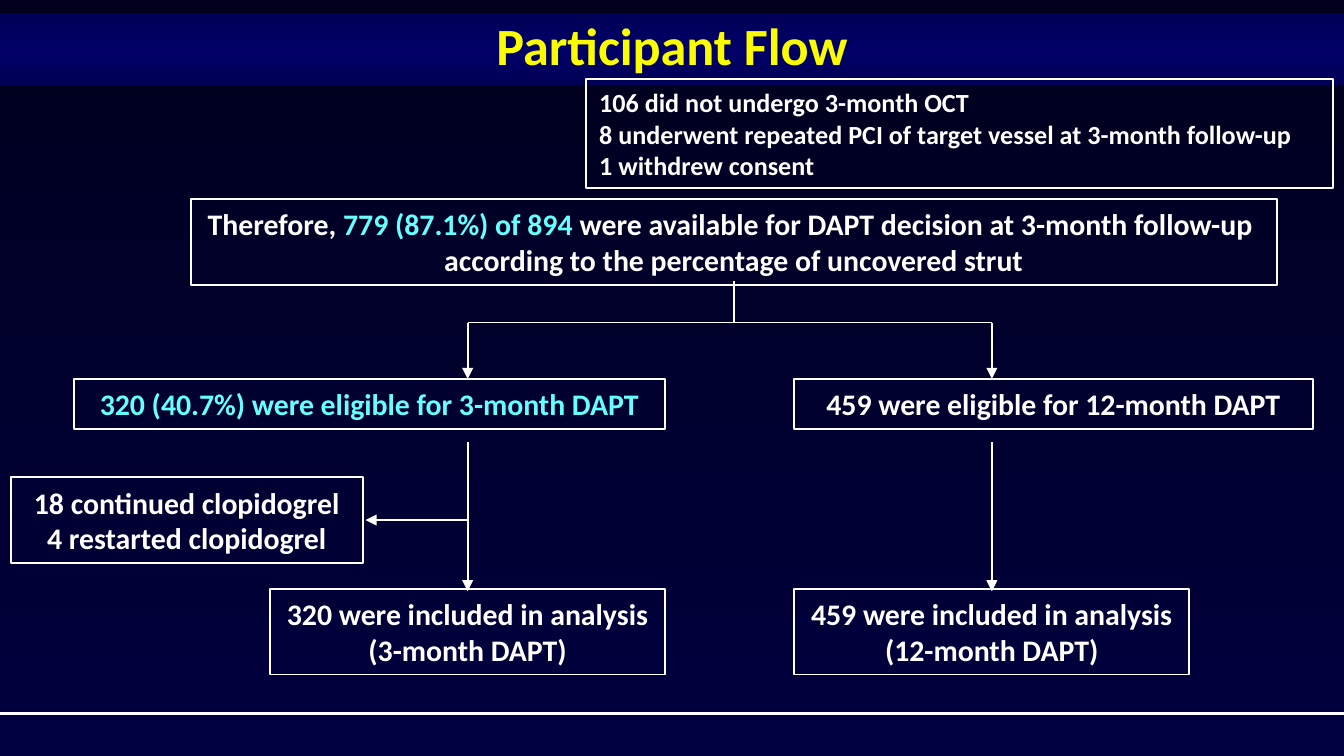
from copy import deepcopy

from pptx import Presentation, util as u
from pptx.dml.color import RGBColor
from pptx.enum import shapes, text
from pptx.oxml.ns import qn
from lxml import etree

PX = 9144
FONT = "Calibri"
HUE = {
    "white": "FFFFFF", "cyan": "66FFFF", "yellow": "FAFD00",
    "top": "00001D", "base": "00003E", "edge": "000057", "mid": "000066",
}


def rgb(name):
    """Return the named colour."""
    return RGBColor.from_string(HUE[name])


def paint(fill, root, names):
    """Fill downwards with evenly spaced colour stops."""
    fill.gradient()
    fill.gradient_angle = 270
    stops = root.xpath(".//a:gsLst")[0]
    while len(stops) < len(names):
        stops.append(deepcopy(stops[0]))
    for i, (stop, name) in enumerate(zip(fill.gradient_stops, names)):
        stop.position = i / (len(names) - 1)
        stop.color.rgb = rgb(name)


def style(run, size, hue):
    """Format one run in the bold slide font."""
    font = run.font
    font.name, font.size, font.bold = FONT, u.Pt(size), True
    font.color.rgb = rgb(hue)


def head(slide, box, words):
    """Place the title band."""
    title = slide.shapes.title
    title.left, title.top, title.width, title.height = (n * PX for n in box)
    paint(title.fill, title._element, ["edge", "mid", "edge"])
    frame = title.text_frame
    frame.text = words
    frame.vertical_anchor = text.MSO_ANCHOR.MIDDLE
    para = frame.paragraphs[0]
    para.alignment = text.PP_ALIGN.CENTER
    para.line_spacing = 0.9
    style(para.runs[0], 28, "yellow")


def card(slide, box, lines, size=16, align=text.PP_ALIGN.CENTER):
    """Place an outlined box holding lines of (words, hue) runs."""
    shape = slide.shapes.add_shape(
        shapes.MSO_SHAPE.RECTANGLE, *(n * PX for n in box))
    shape.shadow.inherit = False
    shape.fill.background()
    shape.line.color.rgb = rgb("white")
    shape.line.width = u.Pt(1)
    frame = shape.text_frame
    frame.word_wrap = True
    frame.vertical_anchor = text.MSO_ANCHOR.MIDDLE
    for i, line in enumerate(lines):
        para = frame.add_paragraph() if i else frame.paragraphs[0]
        para.alignment = align
        for words, hue in line:
            run = para.add_run()
            run.text = words
            style(run, size, hue)


def link(slide, x1, y1, x2, y2, arrow=False, width=1):
    """Draw a straight line, with an arrowhead at its end if asked."""
    line = slide.shapes.add_connector(
        shapes.MSO_CONNECTOR.STRAIGHT, *(n * PX for n in (x1, y1, x2, y2)))
    line.line.color.rgb = rgb("white")
    line.line.width = u.Pt(width)
    if arrow:
        etree.SubElement(line.line._get_or_add_ln(), qn("a:tailEnd"),
                         type="triangle")
    etree.SubElement(line._element.spPr, qn("a:effectLst"))


def plain(*lines, hue="white"):
    """Turn strings into lines of one run each."""
    return [[(line, hue)] for line in lines]


def arm(slide, x, left, wide, count, months, hue):
    """Draw one treatment arm, from the split down to the analysis."""
    link(slide, x, 240, x, 282, True)
    card(slide, (left, 282, wide, 37),
         plain(f"{count} were eligible for {months}-month DAPT", hue=hue))
    link(slide, x, 329, x, 440, True)


def total(slide, left, count, months):
    """Place the analysis box of one arm."""
    card(slide, (left, 438, 294, 64),
         plain(f"{count} were included in analysis", f"({months}-month DAPT)"))


def flow(slide):
    """Lay out the participant flow chart."""
    card(slide, (436, 59, 556, 81),
         plain("106 did not undergo 3-month OCT",
               "8 underwent repeated PCI of target vessel at 3-month follow-up",
               "1 withdrew consent"), 14, text.PP_ALIGN.LEFT)
    card(slide, (142, 148, 808, 64), [
        [("Therefore, ", "white"), ("779 (87.1%) of 894 ", "cyan"),
         ("were available for DAPT decision at 3-month follow-up ", "white")],
        [("according to the percentage of uncovered strut", "white")]])
    link(slide, 546, 209, 546, 240)
    link(slide, 348, 240, 738, 240)
    arm(slide, 348, 55, 440, "320 (40.7%)", 3, "cyan")
    arm(slide, 738, 591, 386, "459", 12, "white")
    link(slide, 349, 387, 272, 387, True)
    card(slide, (8, 355, 262, 64),
         plain("18 continued clopidogrel", "4 restarted clopidogrel"))
    total(slide, 201, 320, 3)
    total(slide, 591, 459, 12)


def main():
    """Build and save the slide."""
    deck = Presentation()
    deck.slide_width, deck.slide_height = u.Inches(10), u.Inches(5.625)
    slide = deck.slides.add_slide(deck.slide_layouts[5])
    paint(slide.background.fill, slide._element, ["top", "base"])
    head(slide, (0, 10, 1000, 53), "Participant Flow")
    link(slide, 0, 531, 1000, 531, width=1.75)
    flow(slide)
    deck.save("out.pptx")


if __name__ == "__main__":
    main()
